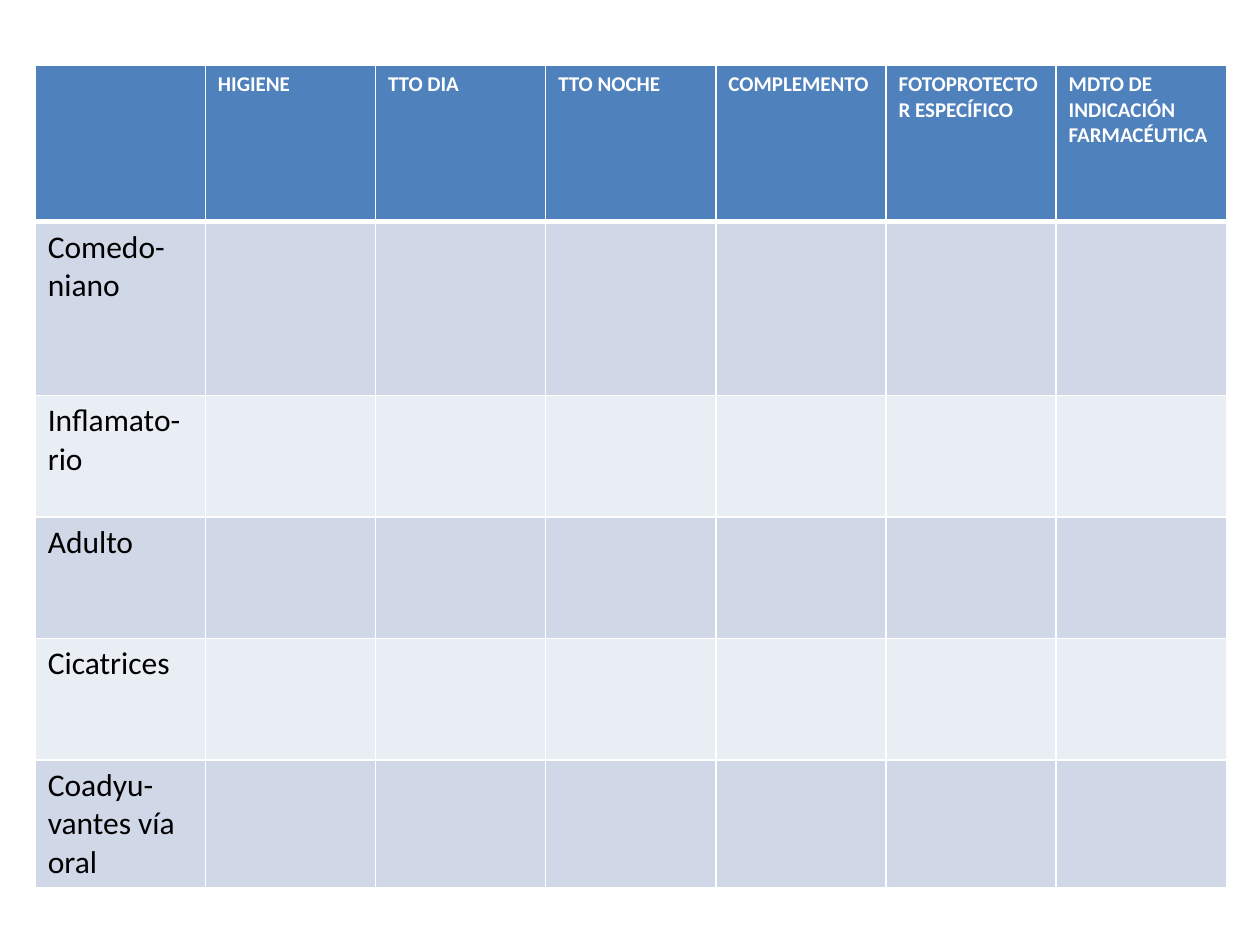
from lxml.etree import SubElement
from pptx import Presentation
from pptx.dml.color import RGBColor as RGB
from pptx.oxml.ns import qn
from pptx.util import Cm, Pt

COLORS = {
    "header": "4F81BD",
    "band_dark": "D0D8E8",
    "band_light": "E9EDF4",
    "white": "FFFFFF",
    "text": "000000",
}
HEADERS = ["", "HIGIENE", "TTO DIA", "TTO NOCHE", "COMPLEMENTO",
           "FOTOPROTECTOR ESPECÍFICO", "MDTO DE INDICACIÓN FARMACÉUTICA"]
ACNE_TYPES = ["Comedo-niano", "Inflamato-rio", "Adulto", "Cicatrices",
              "Coadyu-vantes vía oral"]
ROW_HEIGHTS = [3.15, 3.5] + [2.45] * 4
COL_WIDTH = 3.43


def write(cell, text, size=18, color="text", bold=False):
    r = cell.text_frame.paragraphs[0].add_run()
    r.text = text
    r.font.name = "Calibri"
    r.font.size = Pt(size)
    r.font.bold = bold
    r.font.color.rgb = RGB.from_string(COLORS[color])


def set_borders(cell, top=1, bottom=1):
    """Draw white lines, with widths in points, on all four sides."""
    tcPr = cell._tc.get_or_add_tcPr()
    for side, width in (("L", 1), ("R", 1), ("T", top), ("B", bottom)):
        ln = SubElement(tcPr, qn(f"a:ln{side}"), w=str(Pt(width)))
        fill = SubElement(ln, qn("a:solidFill"))
        SubElement(fill, qn("a:srgbClr"), val=COLORS["white"])


prs = Presentation()
prs.slide_width, prs.slide_height = Cm(25.4), Cm(19.05)
slide = prs.slides.add_slide(prs.slide_layouts[6])

table = slide.shapes.add_table(
    len(ROW_HEIGHTS), len(HEADERS), Cm(0.71), Cm(1.32),
    Cm(COL_WIDTH * len(HEADERS)), Cm(sum(ROW_HEIGHTS))).table
for col in table.columns:
    col.width = Cm(COL_WIDTH)
for row, height in zip(table.rows, ROW_HEIGHTS):
    row.height = Cm(height)

for i, row in enumerate(table.rows):
    band = "header" if i == 0 else "band_dark" if i % 2 else "band_light"
    for cell in row.cells:
        set_borders(cell, top=3 if i == 1 else 1, bottom=3 if i == 0 else 1)
        cell.fill.solid()
        cell.fill.fore_color.rgb = RGB.from_string(COLORS[band])

for j, header in enumerate(HEADERS):
    if header:
        write(table.cell(0, j), header, size=12, color="white", bold=True)
for i, acne_type in enumerate(ACNE_TYPES, start=1):
    write(table.cell(i, 0), acne_type)

prs.save("out.pptx")
